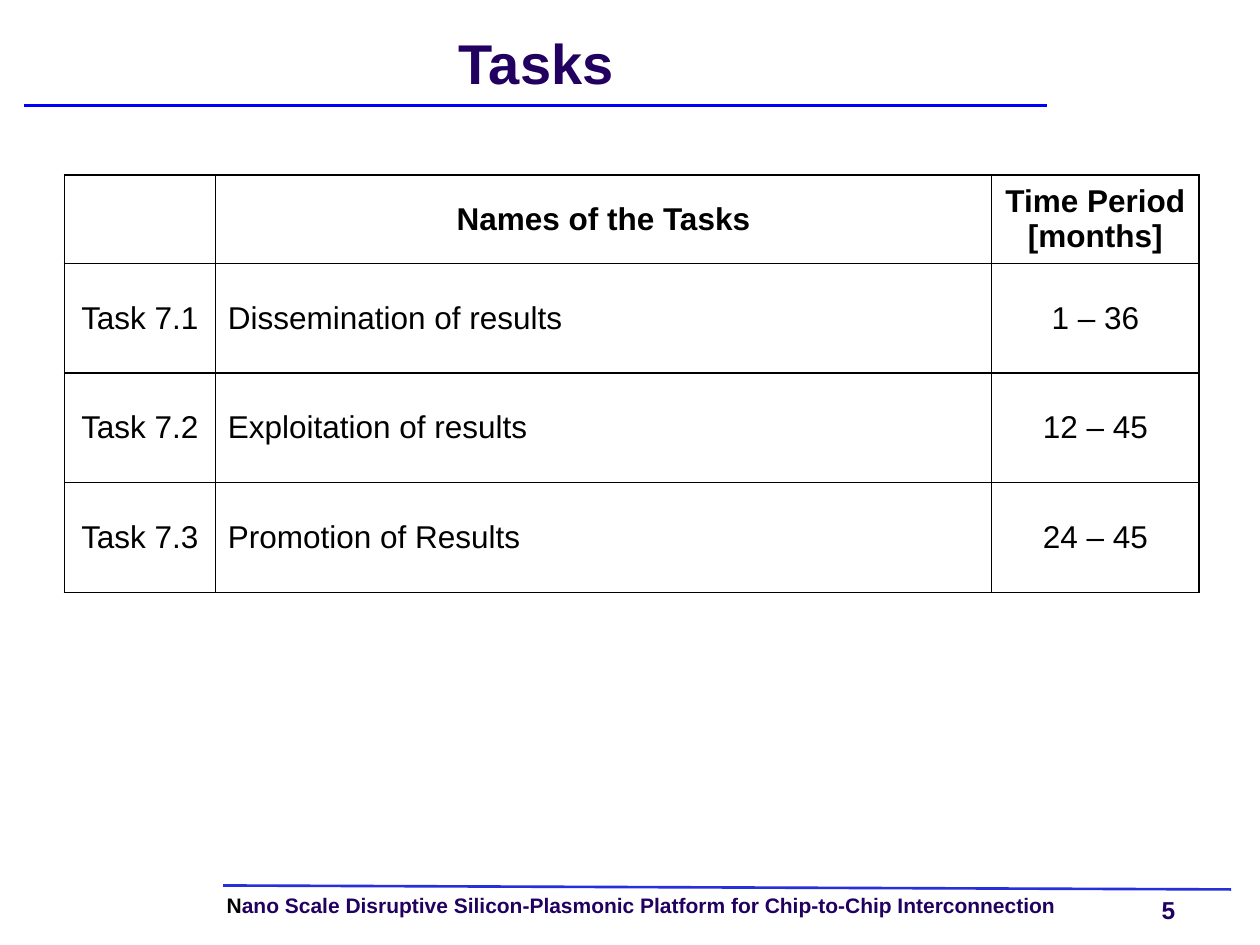
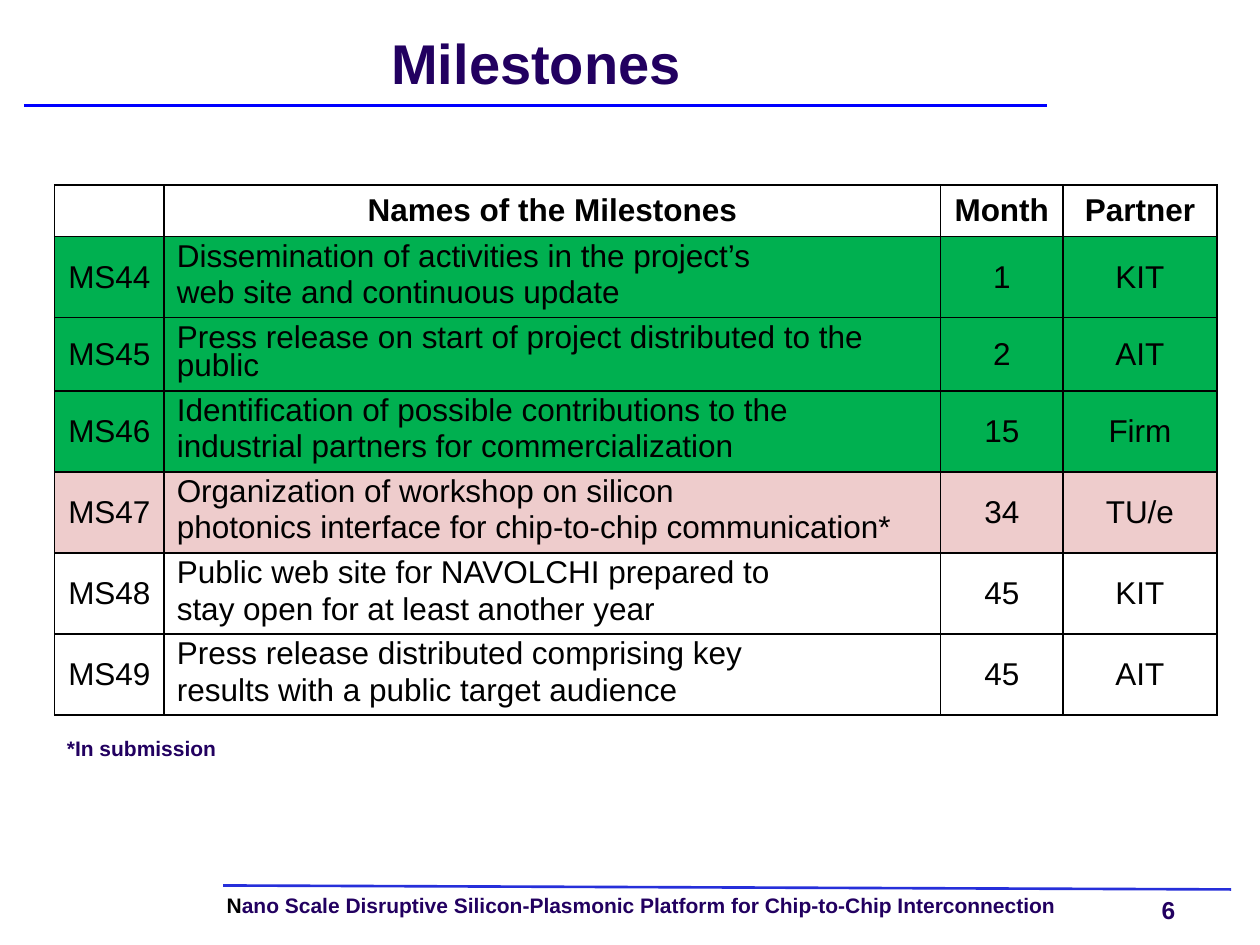
from dataclasses import dataclass

from lxml import etree
from pptx import Presentation
from pptx.dml.color import RGBColor
from pptx.enum.shapes import MSO_CONNECTOR
from pptx.enum.text import MSO_ANCHOR, MSO_AUTO_SIZE, PP_ALIGN
from pptx.oxml.ns import qn
from pptx.util import Cm, Pt

STRAIGHT = MSO_CONNECTOR.STRAIGHT
MIDDLE = MSO_ANCHOR.MIDDLE
FIXED = MSO_AUTO_SIZE.NONE
GROW = MSO_AUTO_SIZE.SHAPE_TO_FIT_TEXT
LEFT, CENTER = PP_ALIGN.LEFT, PP_ALIGN.CENTER


@dataclass(frozen=True)
class Theme:
    font: str = "Arial"
    ink: str = "220060"
    black: str = "000000"
    rule: str = "0000FF"
    base: str = "262FDA"
    done: str = "00B050"
    late: str = "EECCCC"
    title: int = 32
    cell: int = 18
    page: int = 14
    small: int = 12
    stroke: float = 1.5
    grid: int = 1


THEME = Theme()
FOOT = ("N", "ano Scale Disruptive Silicon-Plasmonic Platform for "
        "Chip-to-Chip Interconnection")

TASKS = [
    ("", "Names of the Tasks", "Time Period [months]"),
    ("Task 7.1", "Dissemination of results", "1 – 36"),
    ("Task 7.2", "Exploitation of results", "12 – 45"),
    ("Task 7.3", "Promotion of Results", "24 – 45"),
]

STONES = [
    ("", "Names of the Milestones", "Month", "Partner"),
    ("MS44", "Dissemination of activities in the project’s\n"
     "web site and continuous update", "1", "KIT"),
    ("MS45", "Press release on start of project distributed to the public",
     "2", "AIT"),
    ("MS46", "Identification of possible contributions to the\n"
     "industrial partners for commercialization", "15", "Firm"),
    ("MS47", "Organization of workshop on silicon\n"
     "photonics interface for chip-to-chip communication*", "34", "TU/e"),
    ("MS48", "Public web site for NAVOLCHI prepared to\n"
     "stay open for at least another year", "45", "KIT"),
    ("MS49", "Press release distributed comprising key\n"
     "results with a public target audience", "45", "AIT"),
]


def style(font, size, color=THEME.ink, bold=True):
    font.name = THEME.font
    font.size = Pt(size)
    font.bold = bold
    font.color.rgb = RGBColor.from_string(color)


def clear(frame):
    frame.margin_left = frame.margin_right = 0
    frame.margin_top = frame.margin_bottom = 0


def add_line(slide, x1, y1, x2, y2, color):
    line = slide.shapes.add_connector(
        STRAIGHT, Cm(x1), Cm(y1), Cm(x2), Cm(y2))
    line.line.color.rgb = RGBColor.from_string(color)
    line.line.width = Pt(THEME.stroke)
    etree.SubElement(line._element.spPr, qn("a:effectLst"))


def add_text(slide, box, text, size, wrap=False):
    frame = slide.shapes.add_textbox(*map(Cm, box)).text_frame
    frame.word_wrap = wrap
    frame.auto_size = GROW
    frame.text = text
    style(frame.paragraphs[0].runs[0].font, size)
    return frame


def add_head(slide, box, text):
    left, top, width, height = box
    shape = slide.shapes.title
    shape.left, shape.top, shape.width, shape.height = map(Cm, box)
    frame = shape.text_frame
    clear(frame)
    frame.auto_size = FIXED
    frame.vertical_anchor = MIDDLE
    frame.text = text
    para = frame.paragraphs[0]
    para.alignment = CENTER
    para.line_spacing = Pt(THEME.title)
    style(para.runs[0].font, THEME.title)
    rule = top + height - 0.08
    add_line(slide, left - 0.03, rule, left + width, rule, THEME.rule)


def add_foot(slide, box, page):
    left, top, width, height = box
    add_line(slide, left, top, left + width, top + 0.08, THEME.base)
    frame = add_text(slide, (left + 0.07, top + 0.2, 18.14, 0.46), FOOT[0],
                     THEME.small, wrap=True)
    clear(frame)
    para = frame.paragraphs[0]
    para.line_spacing = 0.9
    rest = para.add_run()
    rest.text = FOOT[1]
    style(para.runs[0].font, THEME.small, THEME.black)
    style(rest.font, THEME.small)
    clear(add_text(slide, (left + width - 1.4, top + 0.2, 1.02, height - 0.2),
                   str(page), THEME.page))


def add_edges(cell):
    props = cell._tc.get_or_add_tcPr()
    for side in ("lnL", "lnR", "lnT", "lnB"):
        edge = etree.SubElement(props, qn("a:" + side), w=str(Pt(THEME.grid)))
        fill = etree.SubElement(edge, qn("a:solidFill"))
        etree.SubElement(fill, qn("a:srgbClr"), val=THEME.black)


def fill_cell(cell, text, head, name, color, tight):
    add_edges(cell)
    if color:
        cell.fill.solid()
        cell.fill.fore_color.rgb = RGBColor.from_string(color)
    else:
        cell.fill.background()
    cell.vertical_anchor = MIDDLE
    cell.text_frame.text = text
    left = name and not head
    for i, para in enumerate(cell.text_frame.paragraphs):
        para.alignment = LEFT if left else CENTER
        if left and tight:
            para.line_spacing = 0.8
            if i:
                para.space_before = Pt(THEME.cell / 4)
        style(para.font, THEME.cell, THEME.black, head)
        for run in para.runs:
            style(run.font, THEME.cell, THEME.black, head)


def add_grid(slide, spot, data, cols, rows, fills=(), tight=False):
    left, top = spot
    table = slide.shapes.add_table(
        len(rows), len(cols), Cm(left), Cm(top),
        Cm(sum(cols)), Cm(sum(rows))).table
    table.first_row = table.horz_banding = False
    for col, width in zip(table.columns, cols):
        col.width = Cm(width)
    for r, (row, height) in enumerate(zip(table.rows, rows)):
        row.height = Cm(height)
        color = fills[r] if r < len(fills) else None
        for c, cell in enumerate(row.cells):
            fill_cell(cell, data[r][c], r == 0, c == 1, color, tight)


def add_page(deck, title, page):
    slide = deck.slides.add_slide(deck.slide_layouts[5])
    add_foot(slide, (4.5, 17.85, 20.32, 0.8), page)
    add_head(slide, (0.51, 0.51, 20.6, 1.7), title)
    return slide


def add_tasks(deck):
    slide = add_page(deck, "Tasks", 5)
    add_grid(slide, (1.3, 3.53), TASKS, (3.04, 15.65, 4.18),
             (1.67, 2.21, 2.21, 2.21))


def add_stones(deck):
    slide = add_page(deck, "Milestones", 6)
    fills = [None] + [THEME.done] * 3 + [THEME.late]
    add_grid(slide, (1.1, 3.73), STONES, (2.21, 15.65, 2.47, 3.1),
             (1.04, 1.55, 1.38, 1.55, 1.55, 1.55, 1.55), fills, tight=True)
    add_text(slide, (1.1, 14.7, 3.55, 0.77), "*In submission", THEME.small)


def main():
    deck = Presentation()
    deck.slide_width, deck.slide_height = Cm(25.4), Cm(19.05)
    add_tasks(deck)
    add_stones(deck)
    deck.save("out.pptx")


if __name__ == "__main__":
    main()
